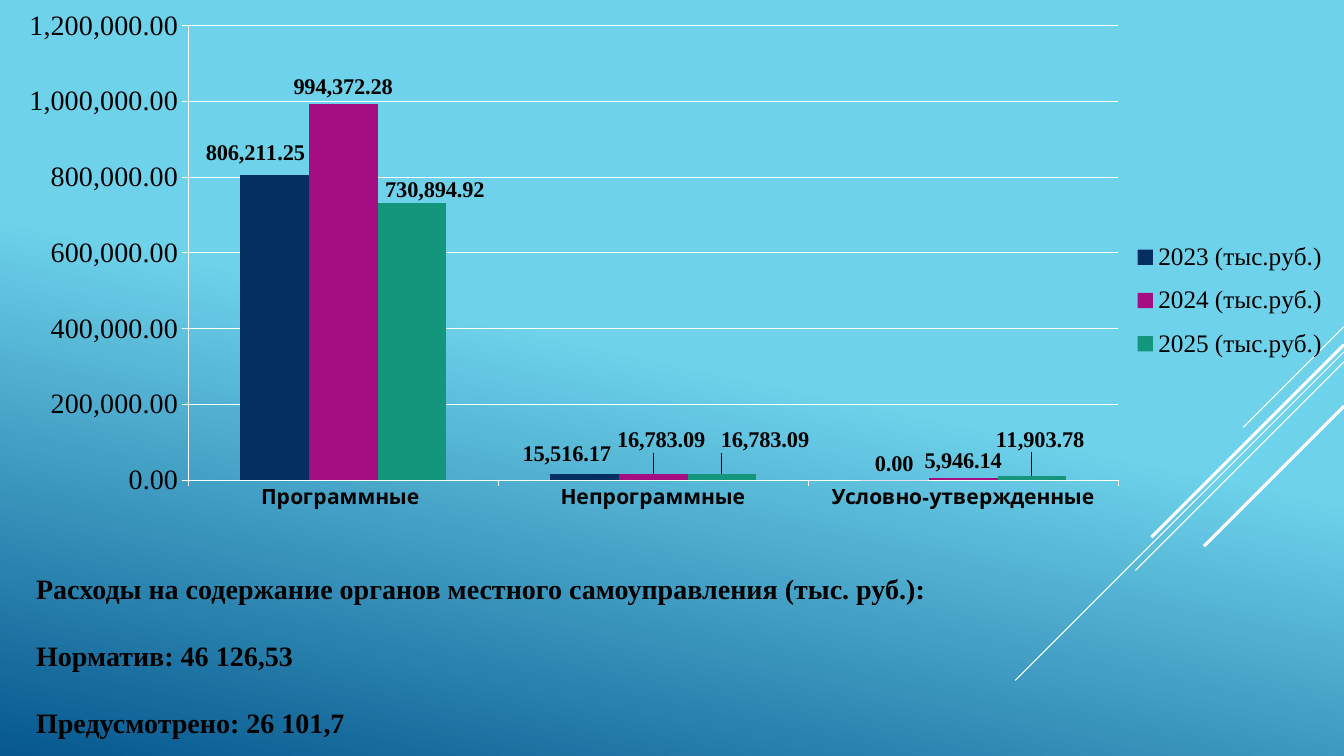
from lxml import etree
from pptx import Presentation
from pptx.chart.data import CategoryChartData
from pptx.dml.color import RGBColor
from pptx.enum.chart import XL_CHART_TYPE, XL_LABEL_POSITION, XL_LEGEND_POSITION, XL_TICK_MARK
from pptx.enum.shapes import MSO_CONNECTOR
from pptx.enum.text import MSO_AUTO_SIZE
from pptx.oxml.ns import qn
from pptx.util import Inches, Pt

COLUMNS = XL_CHART_TYPE.COLUMN_CLUSTERED
OUTSIDE_END = XL_LABEL_POSITION.OUTSIDE_END
LEGEND_RIGHT = XL_LEGEND_POSITION.RIGHT
TICK_OUT = XL_TICK_MARK.OUTSIDE
STRAIGHT = MSO_CONNECTOR.STRAIGHT

WHITE, BLACK = "FFFFFF", "000000"
SERIF = "Times New Roman"
MONEY = "#,##0.00"


def style(font, size, color=BLACK, name=SERIF, bold=False):
    font.size, font.name, font.bold = Pt(size), name, bold
    font.color.rgb = RGBColor.from_string(color)


def place(parent, index, **values):
    """Put a manual layout, in shares of the chart, at a child position."""
    for old in parent.findall(qn("c:layout")):
        parent.remove(old)
    layout = etree.Element(qn("c:layout"))
    manual = etree.SubElement(layout, qn("c:manualLayout"))
    for tag, value in values.items():
        etree.SubElement(manual, qn("c:" + tag)).set("val", str(value))
    parent.insert(index, layout)


prs = Presentation()
prs.slide_width, prs.slide_height = Inches(13.33), Inches(7.5)
W, H = prs.slide_width, prs.slide_height
slide = prs.slides.add_slide(prs.slide_layouts[6])

# Background gradient
backdrop = slide.background.fill
backdrop.gradient()
backdrop.gradient_angle = 360 - 102
for stop, (position, color) in zip(backdrop.gradient_stops, [(0.48, "6ED2EB"), (1, "06588E")]):
    stop.position = position
    stop.color.rgb = RGBColor.from_string(color)

# Diagonal rays: each starts on the right edge and falls at 45 degrees
for top, run, weight in [(3.24, 1, 0.75), (3.49, 3.26, 0.75), (3.59, 2.07, 0.75),
                         (3.42, 1.91, 2.25), (4.03, 1.39, 2.25)]:
    ray = slide.shapes.add_connector(STRAIGHT, W, Inches(top), W - Inches(run), Inches(top + run))
    ray.line.color.rgb = RGBColor.from_string(WHITE)
    ray.line.width = Pt(weight)
    etree.SubElement(ray._element.spPr, qn("a:effectLst"))

# Spending chart: values, colour, and label shifts by category
years = {
    "2023 (тыс.руб.)": ((806211.25, 15516.17, 0), "052F61",
                        {0: (-0.014, -0.009), 1: (-0.013, -0.007)}),
    "2024 (тыс.руб.)": ((994372.28, 16783.09, 5946.14), "A50E82",
                        {1: (0.006, -0.029)}),
    "2025 (тыс.руб.)": ((730894.92, 16783.09, 11903.78), "14967C",
                        {0: (0.017, 0.005), 1: (0.032, -0.029), 2: (0.006, -0.033)}),
}
spending = CategoryChartData(number_format=MONEY)
spending.categories = ["Программные ", "Непрограммные", "Условно-утвержденные"]
for year, (values, _, _) in years.items():
    spending.add_series(year, values)
chart = slide.shapes.add_chart(COLUMNS, 0, 0, W, Inches(5.79), spending).chart
chart.has_title = False
style(chart.font, 18, WHITE, "League Spartan")

plot = chart.plots[0]
plot.gap_width = 150
plot.vary_by_categories = False
for series, (_, color, shifts) in zip(plot.series, years.values()):
    series.format.fill.solid()
    series.format.fill.fore_color.rgb = RGBColor.from_string(color)
    labels = series.data_labels
    labels.show_value = True
    labels.number_format, labels.number_format_is_linked = MONEY, False
    labels.position = OUTSIDE_END
    style(labels.font, 16, bold=True)
    for category, (dx, dy) in shifts.items():
        label = series.points[category].data_label
        style(label.font, 16, bold=True)
        label.position = OUTSIDE_END
        place(label._get_or_add_dLbl(), 1, x=dx, y=dy)

# Axes and grid
amounts, groups = chart.value_axis, chart.category_axis
amounts.minimum_scale, amounts.maximum_scale, amounts.major_unit = 0, 1200000, 200000
amounts.tick_labels.number_format = MONEY
amounts.tick_labels.number_format_is_linked = False
style(amounts.tick_labels.font, 20)
style(groups.tick_labels.font, 15, name="League Spartan", bold=True)
amounts.has_major_gridlines = True
for axis in (amounts, groups):
    axis.major_tick_mark = TICK_OUT
for ruled in (amounts, groups, amounts.major_gridlines):
    ruled.format.line.color.rgb = RGBColor.from_string(WHITE)
    ruled.format.line.width = Pt(0.75)

# Legend and plot area
chart.has_legend = True
legend = chart.legend
legend.position = LEGEND_RIGHT
legend.include_in_layout = False
style(legend.font, 18)
place(legend._element, 1, xMode="edge", yMode="edge", x=0.84, y=0.39, w=0.15, h=0.25)
place(chart._chartSpace.chart.plotArea, 0, layoutTarget="inner", xMode="edge", yMode="edge",
      x=0.14, y=0.044, w=0.692, h=0.779)

# Upkeep figures
upkeep = slide.shapes.add_textbox(Inches(0.26), Inches(5.45), Inches(12.96), Inches(1.89)).text_frame
upkeep.word_wrap = True
upkeep.auto_size = MSO_AUTO_SIZE.SHAPE_TO_FIT_TEXT
upkeep.text = "\n".join([
    "Расходы на содержание органов местного самоуправления (тыс. руб.):",
    "Норматив: 46 126,53",
    "Предусмотрено: 26 101,7",
])
spacing = {"line_spacing": 1.5, "space_before": Pt(6), "space_after": Pt(6)}
for line in upkeep.paragraphs:
    for attribute, value in spacing.items():
        setattr(line, attribute, value)
    style(line.runs[0].font, 20, bold=True)

prs.save("out.pptx")
